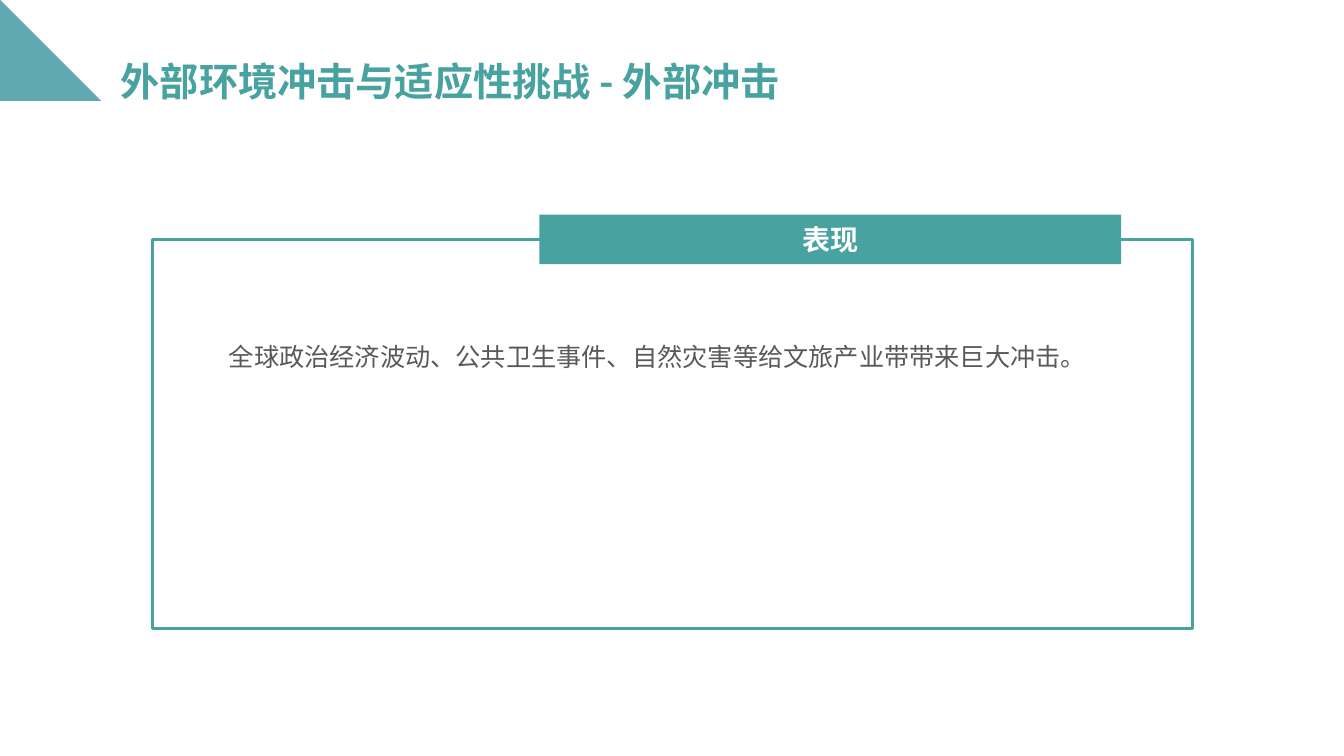
from pptx import Presentation
from pptx.dml.color import RGBColor
from pptx.enum.shapes import MSO_SHAPE
from pptx.enum.text import MSO_ANCHOR, PP_ALIGN
from pptx.oxml.ns import qn
from pptx.util import Inches, Pt
from lxml.etree import SubElement

TITLE = "外部环境冲击与适应性挑战 - 外部冲击"
LABEL = "表现"
BODY = "全球政治经济波动、公共卫生事件、自然灾害等给文旅产业带带来巨大冲击。"

THEME = {
    "font": "Noto Sans CJK SC",
    "teal": RGBColor(0x48, 0xA2, 0xA0),
    "blue": RGBColor(0x6C, 0x92, 0xC0),
    "white": RGBColor(0xFF, 0xFF, 0xFF),
    "grey": RGBColor(0x59, 0x59, 0x59),
    "title": Pt(28),
    "label": Pt(20),
    "body": Pt(18),
    "frame_line": Pt(2.25),
    "arrow_opacity": 68,
}

# Each arrow is three rounded corners; a corner is start, two controls, end.
ARROWS = [
    ("blue", [[(0.68, 0.89), (0.74, 0.85), (0.74, 0.77), (0.68, 0.73)],
              [(0.13, 0.42), (0.07, 0.39), (0, 0.43), (0, 0.5)],
              [(0, 1.12), (0, 1.19), (0.07, 1.24), (0.13, 1.2)]]),
    ("teal", [[(1.04, 0.89), (1.1, 0.85), (1.1, 0.76), (1.04, 0.72)],
              [(0.44, 0.37), (0.37, 0.33), (0.29, 0.38), (0.29, 0.46)],
              [(0.29, 1.15), (0.29, 1.22), (0.37, 1.27), (0.44, 1.23)]]),
]
CURVE_STEPS = 10

TITLE_BOX = (1.1, 0.52, 11.82, 0.57)
FRAME = (1.51, 2.38, 10.32, 3.86)
LABEL_BAR = (5.35, 2.13, 5.77, 0.49)
BODY_BOX = (1.93, 3.22, 9.18, 2.19)


def curve_points(corner):
    """Sample a cubic Bezier curve into evenly stepped points."""
    for step in range(CURVE_STEPS + 1):
        t = step / CURVE_STEPS
        weights = ((1 - t) ** 3, 3 * t * (1 - t) ** 2, 3 * t * t * (1 - t), t ** 3)
        yield tuple(sum(w * point[axis] for w, point in zip(weights, corner))
                    for axis in (0, 1))


def add_arrow(slide, color, corners):
    outline = [point for corner in corners for point in curve_points(corner)]
    builder = slide.shapes.build_freeform(*outline[0], scale=Inches(1))
    builder.add_line_segments(outline[1:], close=True)
    arrow = builder.convert_to_shape()
    arrow.shadow.inherit = False
    arrow.fill.solid()
    arrow.fill.fore_color.rgb = THEME[color]
    arrow.line.fill.background()
    solid = arrow.fill._xPr.find(qn("a:solidFill"))
    SubElement(solid[0], qn("a:alpha"), val=str(THEME["arrow_opacity"] * 1000))


def add_rectangle(slide, box):
    rectangle = slide.shapes.add_shape(MSO_SHAPE.RECTANGLE, *map(Inches, box))
    rectangle.shadow.inherit = False
    return rectangle


def write(frame, text, size, color, bold=False, **layout):
    """Put one styled paragraph in a text frame."""
    frame.word_wrap = True
    paragraph = frame.paragraphs[0]
    for attribute, value in layout.items():
        setattr(paragraph, attribute, value)
    run = paragraph.add_run()
    run.text = text
    looks = {"name": THEME["font"], "size": THEME[size], "bold": bold}
    for attribute, value in looks.items():
        setattr(run.font, attribute, value)
    run.font.color.rgb = THEME[color]
    SubElement(run._r.get_or_add_rPr(), qn("a:ea"), typeface=THEME["font"])


def add_text(slide, box, *content, **layout):
    text_box = slide.shapes.add_textbox(*map(Inches, box))
    write(text_box.text_frame, *content, **layout)


def main():
    deck = Presentation()
    deck.slide_width, deck.slide_height = Inches(13.33), Inches(7.5)
    slide = deck.slides.add_slide(deck.slide_layouts[6])

    add_text(slide, TITLE_BOX, TITLE, "title", "teal", True)
    for color, corners in ARROWS:
        add_arrow(slide, color, corners)

    border = add_rectangle(slide, FRAME)
    border.fill.background()
    border.line.color.rgb = THEME["teal"]
    border.line.width = THEME["frame_line"]

    bar = add_rectangle(slide, LABEL_BAR)
    bar.fill.solid()
    bar.fill.fore_color.rgb = THEME["teal"]
    bar.line.fill.background()
    frame = bar.text_frame
    frame.vertical_anchor = MSO_ANCHOR.MIDDLE
    for side in ("left", "top", "right", "bottom"):
        setattr(frame, f"margin_{side}", 0)
    write(frame, LABEL, "label", "white", True, alignment=PP_ALIGN.CENTER)

    add_text(slide, BODY_BOX, BODY, "body", "grey",
             alignment=PP_ALIGN.CENTER, line_spacing=1.4)
    deck.save("out.pptx")


if __name__ == "__main__":
    main()
